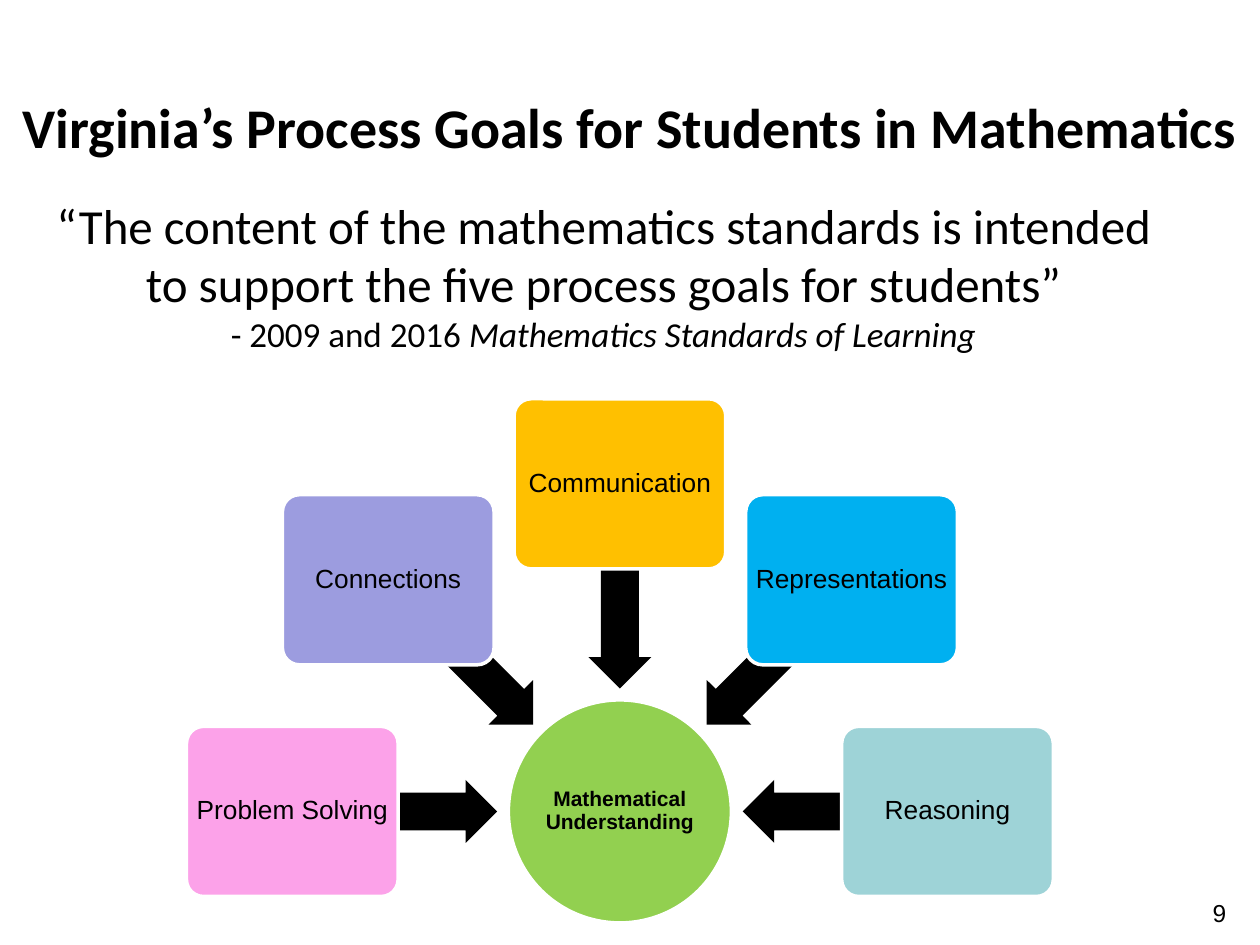
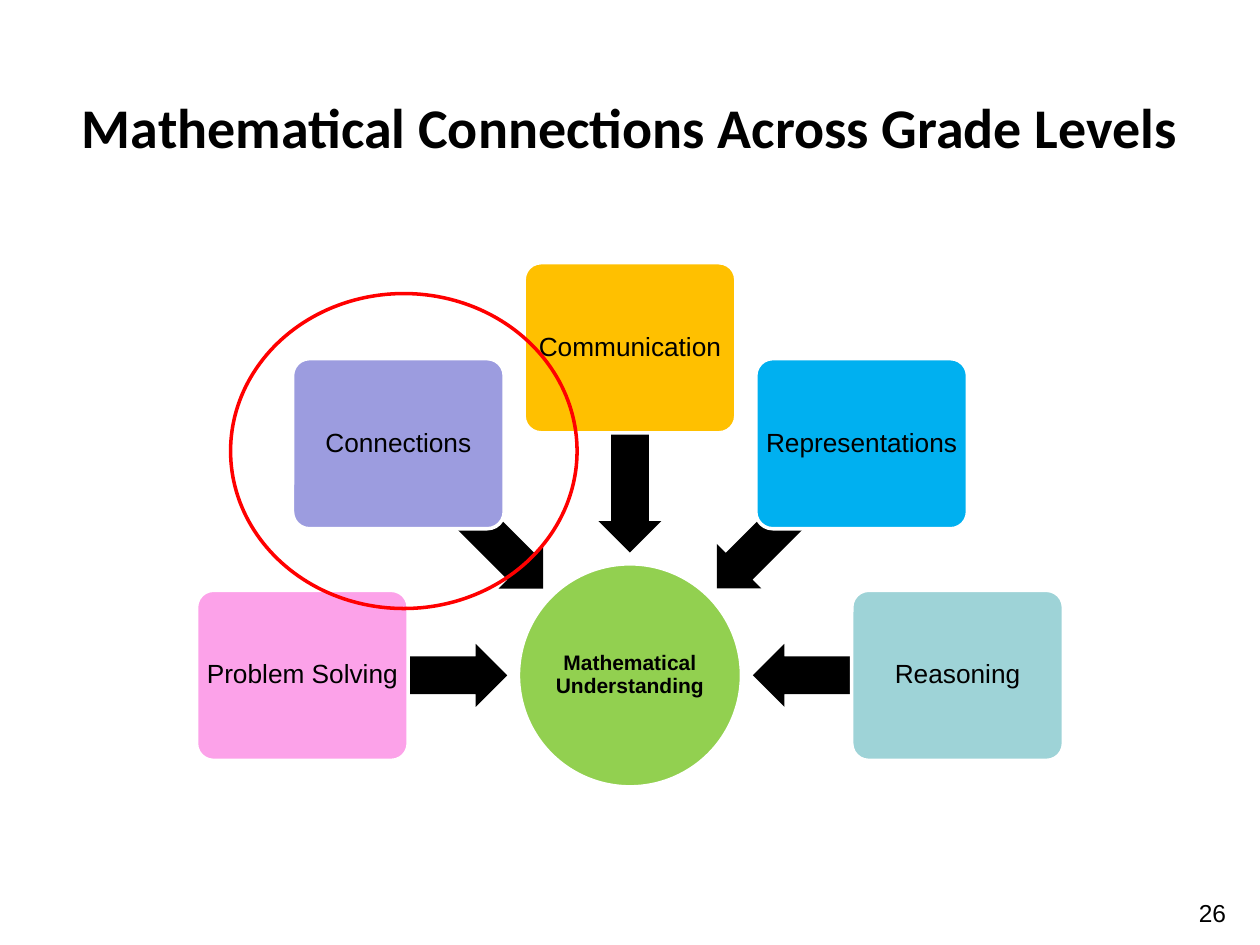
from math import cos, radians, sin

from pptx import Presentation
from pptx.dml.color import RGBColor
from pptx.enum.shapes import MSO_SHAPE
from pptx.enum.text import MSO_ANCHOR, MSO_AUTO_SIZE, PP_ALIGN
from pptx.util import Pt

PX = 9144  # 100 px to the inch

BLACK = RGBColor(0x00, 0x00, 0x00)
WHITE = RGBColor(0xFF, 0xFF, 0xFF)
RED = RGBColor(0xFF, 0x00, 0x00)
GREEN = RGBColor(0x92, 0xD0, 0x50)
PINK = RGBColor(0xFC, 0xA2, 0xE9)
LILAC = RGBColor(0x9C, 0x9C, 0xDF)
GOLD = RGBColor(0xFF, 0xC0, 0x00)
BLUE = RGBColor(0x00, 0xB0, 0xF0)
TEAL = RGBColor(0x9E, 0xD3, 0xD7)

SANS = "Arial"
HEAD = "Calibri"

OVAL = MSO_SHAPE.OVAL
ROUND = MSO_SHAPE.ROUNDED_RECTANGLE
ARROW = MSO_SHAPE.LEFT_ARROW
MIDDLE = MSO_ANCHOR.MIDDLE
CENTER = PP_ALIGN.CENTER
RIGHT = PP_ALIGN.RIGHT
NO_FIT = MSO_AUTO_SIZE.NONE

GOALS = [
    ("Problem Solving", PINK),
    ("Connections", LILAC),
    ("Communication", GOLD),
    ("Representations", BLUE),
    ("Reasoning", TEAL),
]
HUB = 177
GOAL_W, GOAL_H = 168, 135
ARROW_W, ARROW_H = 163, 50
GOAL_RING, ARROW_RING = 260, 179


def px(*sizes):
    return [round(size * PX) for size in sizes]


def add_run(para, text, font, size, bold=False, italic=False):
    run = para.add_run()
    run.text = text
    run.font.name = font
    run.font.size = Pt(size)
    run.font.bold = bold
    run.font.italic = italic
    run.font.color.rgb = BLACK


def add_title(slide, text):
    title = slide.shapes.title
    title.left, title.top, title.width, title.height = px(0, 50, 1000, 100)
    frame = title.text_frame
    frame.auto_size = NO_FIT
    frame.vertical_anchor = MIDDLE
    para = frame.paragraphs[0]
    para.alignment = CENTER
    add_run(para, text, HEAD, 32, bold=True)


def add_box(slide, area, align):
    """Add a wrapping text box and return its first paragraph."""
    frame = slide.shapes.add_textbox(*px(*area)).text_frame
    frame.word_wrap = True
    para = frame.paragraphs[0]
    para.alignment = align
    return para


def add_shape(shapes, kind, area, fill=None, line=None):
    shape = shapes.add_shape(kind, *px(*area))
    shape.shadow.inherit = False
    if fill is None:
        shape.fill.background()
    else:
        shape.fill.solid()
        shape.fill.fore_color.rgb = fill
    if line is None:
        shape.line.fill.background()
    else:
        shape.line.color.rgb = line
        shape.line.width = Pt(2)
    return shape


def add_label(shape, text, size, inset, bold=False):
    frame = shape.text_frame
    frame.word_wrap = True
    frame.vertical_anchor = MIDDLE
    margin, = px(inset)
    frame.margin_left = frame.margin_right = margin
    frame.margin_top = frame.margin_bottom = margin
    para = frame.paragraphs[0]
    para.alignment = CENTER
    para.line_spacing = 0.9
    add_run(para, text, SANS, size, bold)


def place(hub, angle, ring, width, height):
    """Area of an item centred on a ring around the hub."""
    mid_x = hub[0] + ring * cos(radians(angle))
    mid_y = hub[1] + ring * sin(radians(angle))
    return mid_x - width / 2, mid_y - height / 2, width, height


def add_wheel(slide, hub):
    """Draw the goals in a half ring, each pointing at the hub."""
    shapes = slide.shapes.add_group_shape().shapes
    disc = add_shape(shapes, OVAL, place(hub, 0, 0, HUB, HUB), GREEN, WHITE)
    add_label(disc, "Mathematical Understanding", 12, 1, bold=True)
    for step, (name, fill) in enumerate(GOALS):
        angle = 180 + 45 * step
        area = place(hub, angle, ARROW_RING, ARROW_W, ARROW_H)
        arrow = add_shape(shapes, ARROW, area, BLACK)
        arrow.adjustments[0] = 0.6
        arrow.adjustments[1] = 0.5
        arrow.rotation = angle % 360
        area = place(hub, angle, GOAL_RING, GOAL_W, GOAL_H)
        goal = add_shape(shapes, ROUND, area, fill, WHITE)
        goal.adjustments[0] = 0.1
        add_label(goal, name, 15, 3)


def add_quote(slide):
    para = add_box(slide, (28, 150, 902, 150), CENTER)
    add_run(para, "“The content of the mathematics standards is intended "
            "to support the five process goals for students”", HEAD, 28)
    para.add_line_break()
    add_run(para, "- 2009 and 2016 ", HEAD, 20)
    add_run(para, "Mathematics Standards of Learning", HEAD, 20, italic=True)


def add_slide(deck, title, hub, number):
    slide = deck.slides.add_slide(deck.slide_layouts[5])
    add_title(slide, title)
    add_wheel(slide, hub)
    para = add_box(slide, (750, 708, 233, 52), RIGHT)
    add_run(para, number, SANS, 14)
    return slide


def main():
    deck = Presentation()
    deck.slide_width, deck.slide_height = px(1000, 750)

    goals = add_slide(
        deck, "Virginia’s Process Goals for Students in Mathematics",
        (492, 644), "9")
    add_quote(goals)

    links = add_slide(
        deck, "Mathematical Connections Across Grade Levels",
        (500, 536), "26")
    add_shape(links.shapes, OVAL, (183, 233, 275, 250), line=RED)

    deck.save("out.pptx")


if __name__ == "__main__":
    main()
